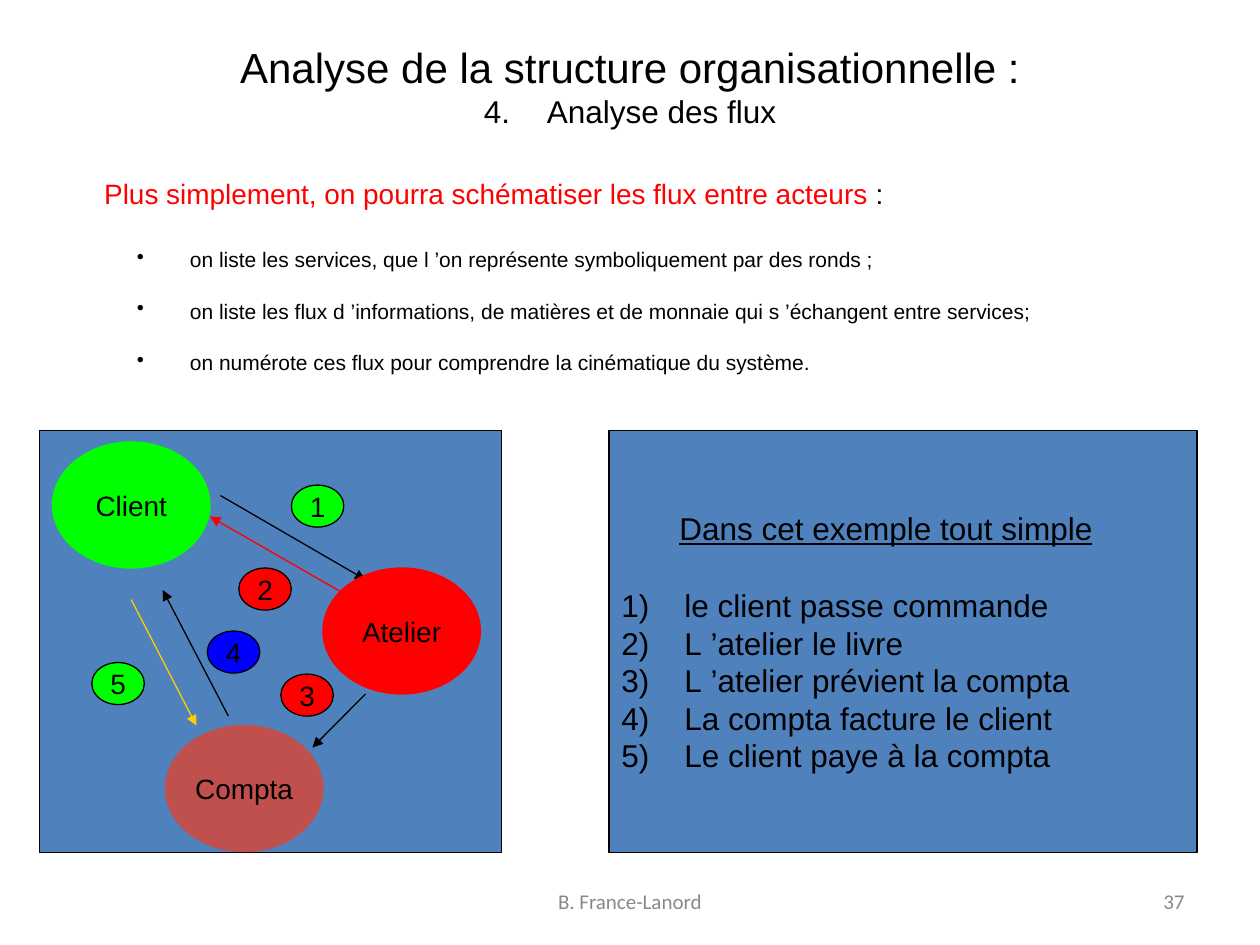
"""Build a slide on organisational flows between a client, a workshop and accounting."""
from dataclasses import dataclass
from typing import NamedTuple, Optional

import pptx
import pptx.dml.color
import pptx.enum.shapes
import pptx.enum.text
import pptx.oxml
import pptx.oxml.ns
import pptx.util

COLUMNS, ROWS = 120, 90
SHAPES = pptx.enum.shapes.MSO_SHAPE
ALIGN = pptx.enum.text.PP_ALIGN
ANCHOR = pptx.enum.text.MSO_ANCHOR


@dataclass(frozen=True)
class Theme:
    """Hold the colours, fonts and type sizes."""
    font: str = "Arial"
    footer_font: str = "Calibri"
    black: str = "000000"
    grey: str = "898989"
    panel: str = "4F81BD"
    red: str = "FF0000"
    green: str = "00FF00"
    blue: str = "0000FF"
    brown: str = "C0504D"
    yellow: str = "FFCC00"
    title: float = 24
    subtitle: float = 18
    label: float = 16
    bullet: float = 12
    line: float = 0.75


class Box(NamedTuple):
    """Give a place and size in grid columns and rows."""
    left: float
    top: float
    width: float
    height: float


class Oval(NamedTuple):
    """Describe an actor or a flow number."""
    text: str
    box: Box
    fill: str
    outline: str


class Arrow(NamedTuple):
    """Describe a flow from one grid point to another."""
    start: tuple[float, float]
    end: tuple[float, float]
    color: str


THEME = Theme()


def actor(text: str, left: float, top: float, color: str) -> Oval:
    """Return a large oval outlined in its own colour."""
    return Oval(text, Box(left, top, 15, 12), color, color)


def badge(text: str, left: float, top: float, color: str) -> Oval:
    """Return a small numbered oval outlined in black."""
    return Oval(text, Box(left, top, 5, 4), color, THEME.black)


FLOWS = [
    actor("Client", 5, 42.1, THEME.green),
    badge("1", 27.75, 46.2, THEME.green),
    Arrow((21, 47.2), (34.8, 55.2), THEME.black),
    Arrow((33.75, 57.1), (20, 49.2), THEME.red),
    badge("2", 22.75, 54.1, THEME.red),
    badge("4", 19.75, 60.1, THEME.blue),
    Arrow((21.75, 68.2), (15.5, 56.2), THEME.black),
    Arrow((12.5, 57.1), (18.7, 69.1), THEME.yellow),
    badge("5", 8.75, 63.1, THEME.green),
    actor("Compta", 15.75, 69.1, THEME.brown),
    badge("3", 26.75, 64.2, THEME.red),
    Arrow((34.8, 66.1), (29.75, 71.2), THEME.black),
    actor("Atelier", 30.75, 54.1, THEME.red),
]
STEPS = [
    "le client passe commande",
    "L\u00a0’atelier le livre",
    "L\u00a0’atelier prévient la compta",
    "La compta facture le client",
    "Le client paye à la compta",
]
BULLETS = [
    "on liste les services, que l\u00a0’on représente symboliquement par des ronds ;",
    "on liste les flux d\u00a0’informations, de matières et de monnaie qui s\u00a0’échangent entre services;",
    "on numérote ces flux pour comprendre la cinématique du système.",
]


class Canvas:
    """Draw grid-placed objects on one slide."""

    def __init__(self, presentation):
        """Add a title-only slide and measure its grid cell."""
        self.slide = presentation.slides.add_slide(presentation.slide_layouts[5])
        self.column = presentation.slide_width / COLUMNS
        self.row = presentation.slide_height / ROWS

    def point(self, column: float, row: float) -> tuple[int, int]:
        """Convert grid columns and rows to lengths."""
        return round(column * self.column), round(row * self.row)

    def place(self, box: Box) -> tuple[int, ...]:
        """Convert a grid box to lengths."""
        return self.point(*box[:2]) + self.point(*box[2:])

    def shape(self, kind, box: Box, fill: str, outline: str):
        """Draw a flat filled shape."""
        shape = self.slide.shapes.add_shape(kind, *self.place(box))
        shape.shadow.inherit = False
        shape.fill.solid()
        shape.fill.fore_color.rgb = rgb(fill)
        shape.line.color.rgb = rgb(outline)
        shape.line.width = pptx.util.Pt(THEME.line)
        return shape

    def oval(self, oval: Oval) -> None:
        """Draw a labelled oval."""
        frame = self.shape(SHAPES.OVAL, oval.box, oval.fill, oval.outline).text_frame
        frame.word_wrap = False
        frame.vertical_anchor = ANCHOR.MIDDLE
        write(frame.paragraphs[0], oval.text, THEME.label, align=ALIGN.CENTER)

    def arrow(self, arrow: Arrow) -> None:
        """Draw a straight arrow."""
        connector = self.slide.shapes.add_connector(
            pptx.enum.shapes.MSO_CONNECTOR.STRAIGHT,
            *self.point(*arrow.start), *self.point(*arrow.end))
        connector.line.color.rgb = rgb(arrow.color)
        connector.line.width = pptx.util.Pt(THEME.line)
        properties = connector.line._get_or_add_ln()
        add_element(properties, "a:tailEnd", type="triangle")
        add_element(connector._element.spPr, "a:effectLst")

    def text_box(self, box: Box, anchor=ANCHOR.TOP):
        """Add a wrapping text box and return its frame."""
        frame = self.slide.shapes.add_textbox(*self.place(box)).text_frame
        frame.word_wrap = True
        frame.vertical_anchor = anchor
        return frame


def rgb(color: str):
    """Convert a hexadecimal colour."""
    return pptx.dml.color.RGBColor.from_string(color)


def add_element(parent, tag: str, **attributes: str):
    """Append an XML element with attributes."""
    element = pptx.oxml.parse_xml(f"<{tag} {pptx.oxml.ns.nsdecls('a')}/>")
    for name, value in attributes.items():
        element.set(name, value)
    parent.append(element)
    return element


def write(paragraph, text: str, size: float, color: str = THEME.black,
          font: str = THEME.font, align=ALIGN.LEFT) -> None:
    """Set a paragraph's text, font and alignment."""
    paragraph.text = text
    paragraph.alignment = align
    paragraph.font.name = font
    paragraph.font.size = pptx.util.Pt(size)
    paragraph.font.color.rgb = rgb(color)


def indent(paragraph, margin: float, first: float, bullet: Optional[str] = None) -> None:
    """Set margins in inches and an optional bullet."""
    properties = paragraph._p.get_or_add_pPr()
    properties.set("marL", str(pptx.util.Inches(margin)))
    properties.set("indent", str(pptx.util.Inches(first)))
    if bullet:
        properties.insert_element_before(
            add_element(properties, "a:buChar", char=bullet), "a:tabLst", "a:defRPr")


def fill_title(canvas: Canvas) -> None:
    """Write the two-line title."""
    title = canvas.slide.shapes.title
    title.left, title.top, title.width, title.height = canvas.place(Box(6, 3.6, 108, 13.4))
    frame = title.text_frame
    frame.vertical_anchor = ANCHOR.TOP
    frame.margin_top = pptx.util.Inches(0.03)
    paragraph = frame.paragraphs[0]
    write(paragraph, "Analyse de la structure organisationnelle :\v4.\tAnalyse des flux",
          THEME.title, align=ALIGN.CENTER)
    for run, size in zip(paragraph.runs, (THEME.title, THEME.subtitle)):
        run.font.size = pptx.util.Pt(size)
    properties = paragraph._p.get_or_add_pPr()
    tabs = add_element(properties, "a:tabLst")
    add_element(tabs, "a:tab", pos=str(pptx.util.Inches(0.5)), algn="l")
    properties.insert_element_before(tabs, "a:defRPr")


def fill_method(canvas: Canvas) -> None:
    """Write the introduction and its bullets."""
    frame = canvas.text_box(Box(8.75, 16.2, 92.2, 19.8))
    intro = frame.paragraphs[0]
    write(intro, "Plus simplement, on pourra schématiser les flux entre acteurs ",
          THEME.label, THEME.red)
    intro.space_after = pptx.util.Pt(6)
    colon = intro.add_run()
    colon.text = ":"
    colon.font.color.rgb = rgb(THEME.black)
    for text in BULLETS:
        paragraph = frame.add_paragraph()
        write(paragraph, text, THEME.bullet)
        paragraph.level = 1
        paragraph.space_before = pptx.util.Pt(15)
        indent(paragraph, 0.68, -0.42, "•")


def fill_example(canvas: Canvas) -> None:
    """Draw the panel that explains the numbered flows."""
    panel = canvas.shape(SHAPES.RECTANGLE, Box(58, 41, 56, 40.2), THEME.panel, THEME.black)
    frame = panel.text_frame
    frame.vertical_anchor = ANCHOR.MIDDLE
    heading = frame.paragraphs[0]
    write(heading, "Dans cet exemple tout simple", THEME.subtitle)
    heading.font.underline = True
    heading.runs[0].font.underline = True
    heading.space_after = pptx.util.Pt(22.5)
    indent(heading, 0.46, 0)
    for number, step in enumerate(STEPS, 1):
        paragraph = frame.add_paragraph()
        write(paragraph, f"{number})\t{step}", THEME.subtitle)
        paragraph.line_spacing = pptx.util.Pt(21.5)
        indent(paragraph, 0.5, -0.5)


def main() -> None:
    """Build and save the presentation."""
    presentation = pptx.Presentation()
    presentation.slide_width = pptx.util.Inches(10)
    presentation.slide_height = pptx.util.Inches(7.5)
    canvas = Canvas(presentation)
    fill_title(canvas)
    for text, box, align in (("37", Box(86, 83.4, 28, 4.8), ALIGN.RIGHT),
                             ("B. France-Lanord", Box(41, 83.4, 38, 4.8), ALIGN.CENTER)):
        frame = canvas.text_box(box, ANCHOR.MIDDLE)
        write(frame.paragraphs[0], text, THEME.bullet, THEME.grey, THEME.footer_font, align)
    fill_example(canvas)
    canvas.shape(SHAPES.RECTANGLE, Box(3.75, 41, 44, 40.2), THEME.panel, THEME.black)
    for item in FLOWS:
        if isinstance(item, Oval):
            canvas.oval(item)
        else:
            canvas.arrow(item)
    fill_method(canvas)
    presentation.save("out.pptx")


if __name__ == "__main__":
    main()
